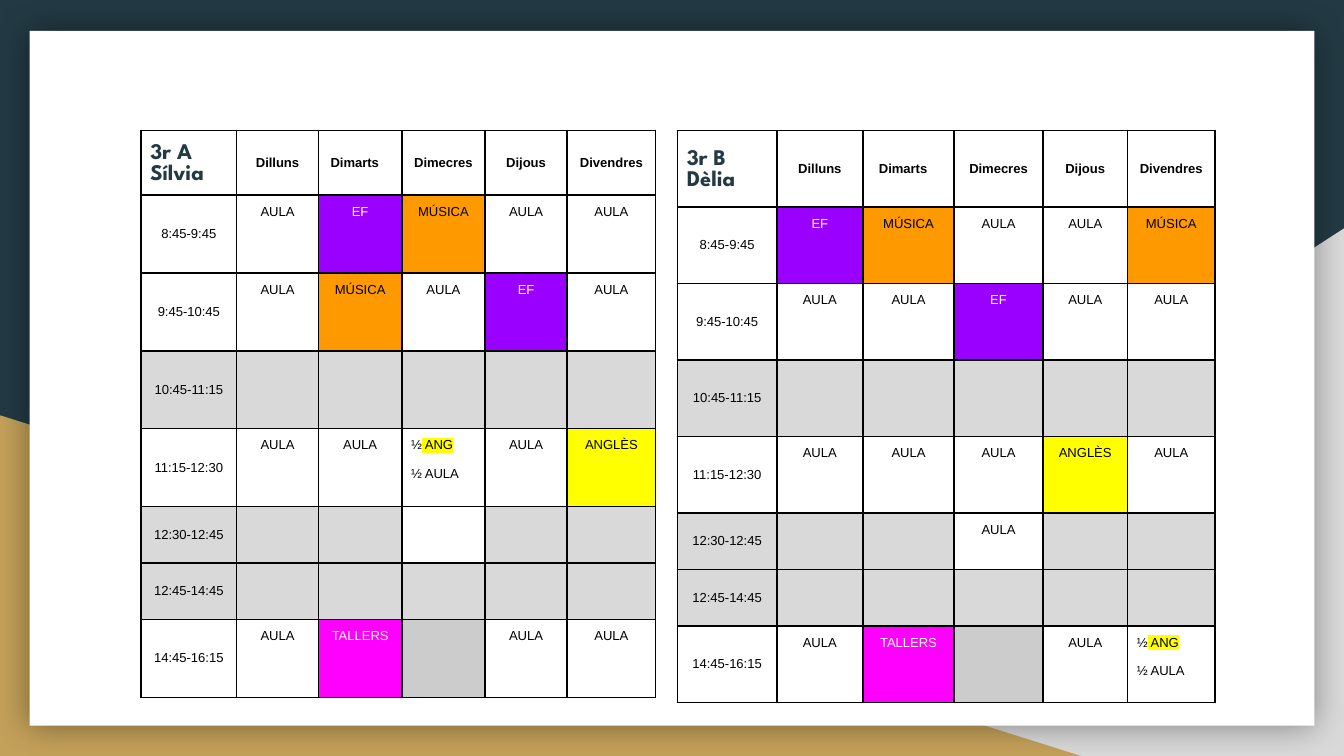
from lxml import etree
from pptx import Presentation
from pptx.dml.color import RGBColor
from pptx.enum import shapes, text
from pptx.oxml import ns
from pptx.util import Inches, Pt

WIDTH = 10
HEIGHT = WIDTH * 9 / 16
HUES = {
    "navy": "233A44", "gold": "C4A15A", "gray": "D9D9D9", "free": "CCCCCC",
    "white": "FFFFFF", "black": "000000", "EF": "9900FF", "MÚSICA": "FF9900",
    "ANGLÈS": "FFFF00", "TALLERS": "FF00FF",
}
LIGHT = ("EF", "TALLERS")  # subjects written in white
DAYS = ["Dilluns", "Dimarts", "Dimecres", "Dijous", "Divendres"]
TIMES = ["8:45-9:45", "9:45-10:45", "10:45-11:15", "11:15-12:30",
         "12:30-12:45", "12:45-14:45", "14:45-16:15"]
BREAKS = ("10:45-11:15", "12:30-12:45", "12:45-14:45")

# One line per time slot: - break, _ blank, x free, ½ split group
SILVIA = """AULA EF MÚSICA AULA AULA
AULA MÚSICA AULA EF AULA
- - - - -
AULA AULA ½ AULA ANGLÈS
- - _ - -
- - - - -
AULA TALLERS x AULA AULA"""
DELIA = """EF MÚSICA AULA AULA MÚSICA
AULA AULA EF AULA AULA
- - - - -
AULA AULA AULA ANGLÈS AULA
- - AULA - -
- - - - -
AULA TALLERS x AULA ½"""
MARKS = {"-": "gray", "_": "white", "x": "free"}


def rgb(name):
    return RGBColor.from_string(HUES[name])


def add(parent, tag, **attrs):
    node = etree.SubElement(parent, ns.qn(tag))
    for key, value in attrs.items():
        node.set(key, str(value))
    return node


def tint(parent, name):
    return add(add(parent, "a:solidFill"), "a:srgbClr", val=HUES[name])


def write(par, words, size=7, font="Arial", hue="black", bold=False, mark=None):
    run = par.add_run()
    run.text = words
    run.font.size, run.font.bold = Pt(size), bold
    run.font.color.rgb = rgb(hue)
    if mark:
        add(add(run.font._element, "a:highlight"), "a:srgbClr", val=HUES[mark])
    run.font.name = font


def panel(slide, kind, hue, left, top, wide, high, flip=False, shade=False):
    box = slide.shapes.add_shape(kind, *map(Inches, (left, top, wide, high)))
    box.shadow.inherit = False
    box.fill.solid()
    box.fill.fore_color.rgb = rgb(hue)
    box.line.fill.background()
    props = box._element.spPr
    if flip:
        props.find(ns.qn("a:xfrm")).set("flipH", "1")
    if shade:
        glow = add(props.find(ns.qn("a:effectLst")), "a:outerShdw",
                   blurRad=Pt(18), dist=0, dir=0, algn="ctr", rotWithShape=0)
        add(add(glow, "a:srgbClr", val=HUES["black"]), "a:alpha", val=40000)


def style(cell, hue=None, middle=False):
    props = cell._tc.get_or_add_tcPr()
    for side in ("L", "R", "T", "B"):
        tint(add(props, "a:ln" + side, w=Pt(1)), "black")
    if hue:
        cell.fill.solid()
        cell.fill.fore_color.rgb = rgb(hue)
    else:
        cell.fill.background()
    cell.margin_left = cell.margin_right = Inches(0.07)
    cell.margin_top = cell.margin_bottom = Inches(0.07)
    if middle:
        cell.vertical_anchor = text.MSO_ANCHOR.MIDDLE
    return cell.text_frame.paragraphs[0]


def label(cell, words, hue=None, **look):
    par = style(cell, hue, middle=True)
    par.alignment = text.PP_ALIGN.CENTER
    write(par, words, **look)


def lesson(cell, code):
    par = style(cell, MARKS.get(code, code if code in HUES else None))
    if code in MARKS:
        par._p.get_or_add_endParaRPr().set("sz", "700")
    elif code == "½":
        write(par, "½")
        write(par, " ANG", mark="ANGLÈS")
        rest = cell.text_frame.add_paragraph()
        rest.space_before = Pt(7.5)
        write(rest, "½ AULA")
    else:
        par.alignment = text.PP_ALIGN.CENTER
        write(par, code, hue="white" if code in LIGHT else "black")


def timetable(slide, left, name, plan, cols, rows):
    frame = slide.shapes.add_table(
        len(rows), len(cols), Inches(left), Inches(0.97),
        Inches(sum(cols)), Inches(sum(rows)))
    grid = frame.table
    grid.first_row = grid.horz_banding = False
    for col, wide in zip(grid.columns, cols):
        col.width = Inches(wide)
    for row, high in zip(grid.rows, rows):
        row.height = Inches(high)

    # Heading row
    write(style(grid.cell(0, 0), middle=True), name, size=12,
          font="League Spartan", hue="navy", bold=True)
    grid.cell(0, 0).margin_top = Inches(0.1)
    for c, day in enumerate(DAYS, 1):
        hue = "white" if day in ("Dimarts", "Dimecres") else None
        label(grid.cell(0, c), day, hue, bold=True)
    grid.cell(0, 2).margin_right = Inches(0.15)

    # Time slots and lessons
    for r, (time, line) in enumerate(zip(TIMES, plan.splitlines()), 1):
        label(grid.cell(r, 0), time, "gray" if time in BREAKS else None)
        for c, code in enumerate(line.split(), 1):
            lesson(grid.cell(r, c), code)


def main():
    deck = Presentation()
    deck.slide_width, deck.slide_height = Inches(WIDTH), Inches(HEIGHT)
    slide = deck.slides.add_slide(deck.slide_layouts[6])

    # Backdrop
    slide.background.fill.solid()
    slide.background.fill.fore_color.rgb = rgb("navy")
    kind = shapes.MSO_SHAPE
    panel(slide, kind.RIGHT_TRIANGLE, "gray", 3.92, 1.7, 6.08, 3.93, flip=True)
    panel(slide, kind.RIGHT_TRIANGLE, "gold", 0, 3.09, 8.06, 2.54)
    panel(slide, kind.RECTANGLE, "white", 0.22, 0.23, 9.56, 5.17, shade=True)

    # Class timetables
    timetable(slide, 1.05, "3r A Sílvia", SILVIA,
              [0.71, 0.61, 0.62, 0.62, 0.61, 0.66],
              [0.48] + [0.58] * 4 + [0.42] * 2 + [0.58])
    timetable(slide, 5.04, "3r B Dèlia", DELIA,
              [0.74, 0.64, 0.68, 0.66, 0.63, 0.65],
              [0.57] * 5 + [0.42] * 2 + [0.57])
    deck.save("out.pptx")


if __name__ == "__main__":
    main()
